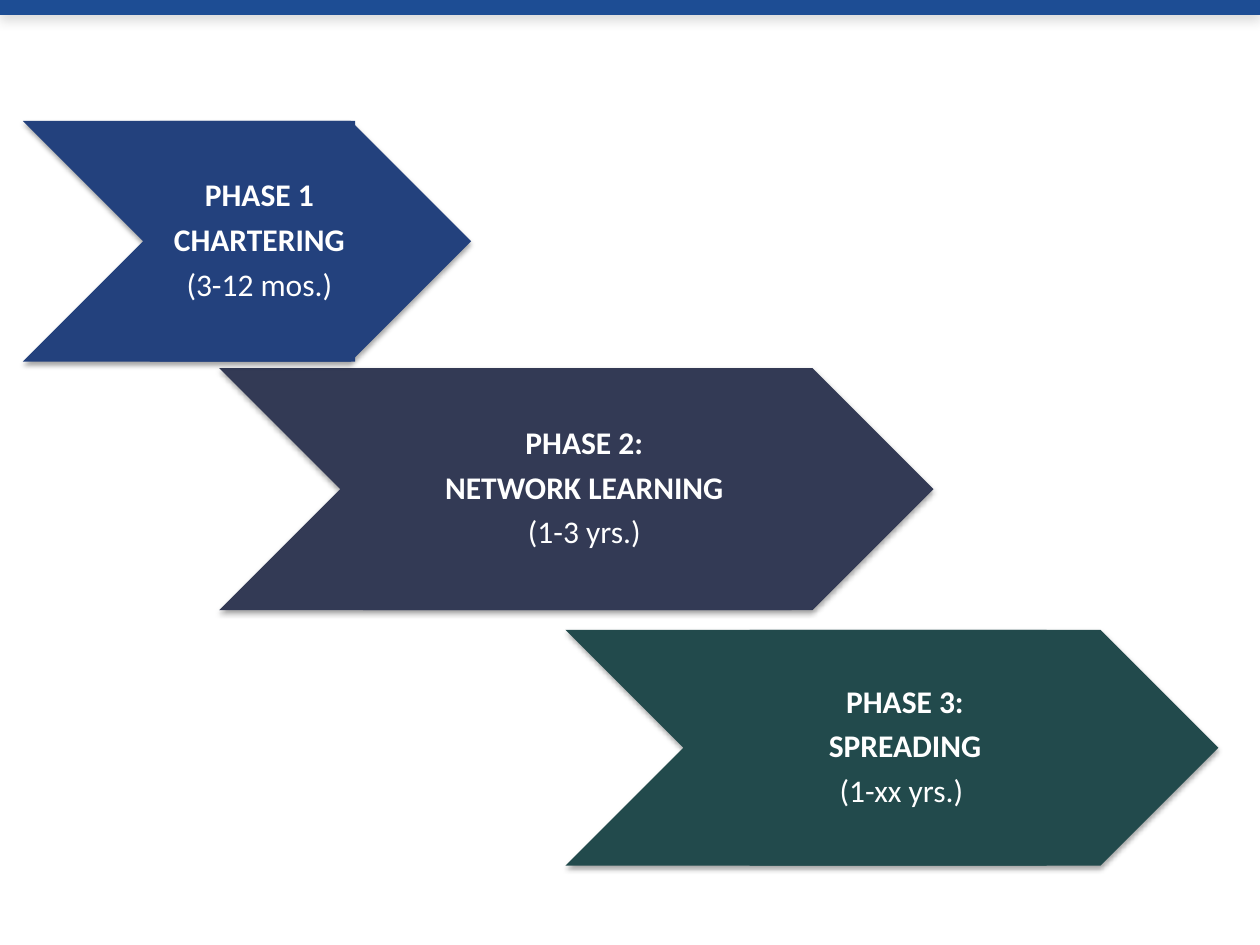
"""Build a slide of three staggered phase chevrons under a top bar."""
from dataclasses import dataclass

from lxml import etree
from pptx import Presentation
from pptx.dml.color import RGBColor
from pptx.enum.shapes import MSO_SHAPE
from pptx.enum.text import MSO_ANCHOR, PP_ALIGN
from pptx.oxml.ns import qn
from pptx.shapes.autoshape import Shape
from pptx.util import Cm, Pt

CHEVRON, RECTANGLE = MSO_SHAPE.CHEVRON, MSO_SHAPE.RECTANGLE
MIDDLE, CENTER = MSO_ANCHOR.MIDDLE, PP_ALIGN.CENTER

WHITE = RGBColor(0xFF, 0xFF, 0xFF)
BAR_BLUE = RGBColor(0x1D, 0x4D, 0x94)
BLUE = RGBColor(0x23, 0x41, 0x7D)
SLATE = RGBColor(0x33, 0x3A, 0x55)
TEAL = RGBColor(0x22, 0x4A, 0x4C)


@dataclass
class Phase:
    heading: str
    activity: str
    duration: str
    color: RGBColor
    left: float
    top: float
    width: float
    height: float
    label_left: float
    label_width: float


PHASES = [
    Phase("PHASE 2:", "NETWORK LEARNING", "(1-3 yrs.)", SLATE,
          4.42, 7.42, 14.4, 4.88, 7.32, 8.64),
    Phase("PHASE 1", "CHARTERING ", "(3-12 mos.)", BLUE,
          0.46, 2.44, 9.04, 4.85, 3.02, 4.14),
    Phase("PHASE 3:", "SPREADING", "(1-xx yrs.) ", TEAL,
          11.4, 12.7, 13.16, 4.75, 15.11, 5.99),
]


def paint(shape: Shape, color: RGBColor) -> None:
    """Give a shape a plain fill with no outline or shadow."""
    shape.shadow.inherit = False
    shape.fill.solid()
    shape.fill.fore_color.rgb = color
    shape.line.fill.background()


def cast_shadow(shape: Shape, blur: float, distance: float, opacity: int) -> None:
    """Add a soft black shadow straight below a painted shape."""
    effects = shape.element.spPr.find(qn("a:effectLst"))
    shadow = etree.SubElement(effects, qn("a:outerShdw"), blurRad=str(Pt(blur)),
                              dist=str(Pt(distance)), dir="5400000", rotWithShape="0")
    black = etree.SubElement(shadow, qn("a:srgbClr"), val="000000")
    etree.SubElement(black, qn("a:alpha"), val=str(opacity * 1000))


def write_label(label: Shape, phase: Phase) -> None:
    """Write the heading, activity and duration of a phase."""
    frame = label.text_frame
    frame.word_wrap = True
    frame.vertical_anchor = MIDDLE
    frame.margin_left = Cm(0.43)
    frame.margin_top = frame.margin_right = frame.margin_bottom = Cm(0.15)
    lines = [(phase.heading, True), (phase.activity, True), (phase.duration, False)]
    for index, (text, bold) in enumerate(lines):
        paragraph = frame.add_paragraph() if index else frame.paragraphs[0]
        paragraph.alignment = CENTER
        paragraph.line_spacing = 0.9
        paragraph.space_after = Pt(6)
        run = paragraph.add_run()
        run.text = text
        run.font.name = "Calibri"
        run.font.size = Pt(18)
        run.font.bold = bold
        run.font.color.rgb = WHITE


def draw_phase(slide, phase: Phase) -> None:
    """Draw a phase as a group of a chevron and its label."""
    group = slide.shapes.add_group_shape()
    arrow = group.shapes.add_shape(CHEVRON, Cm(phase.left), Cm(phase.top),
                                   Cm(phase.width), Cm(phase.height))
    paint(arrow, phase.color)
    cast_shadow(arrow, 3.1, 1.8, 35)
    label = group.shapes.add_shape(RECTANGLE, Cm(phase.label_left), Cm(phase.top),
                                   Cm(phase.label_width), Cm(phase.height))
    paint(label, phase.color)
    write_label(label, phase)


def main() -> None:
    """Assemble and save the slide."""
    deck = Presentation()
    deck.slide_width, deck.slide_height = Cm(25.4), Cm(19.05)
    slide = deck.slides.add_slide(deck.slide_layouts[6])
    top_bar = slide.shapes.add_shape(RECTANGLE, 0, 0, deck.slide_width, Cm(0.3))
    paint(top_bar, BAR_BLUE)
    cast_shadow(top_bar, 6, 3, 15)
    for phase in PHASES:
        draw_phase(slide, phase)
    deck.save("out.pptx")


if __name__ == "__main__":
    main()
